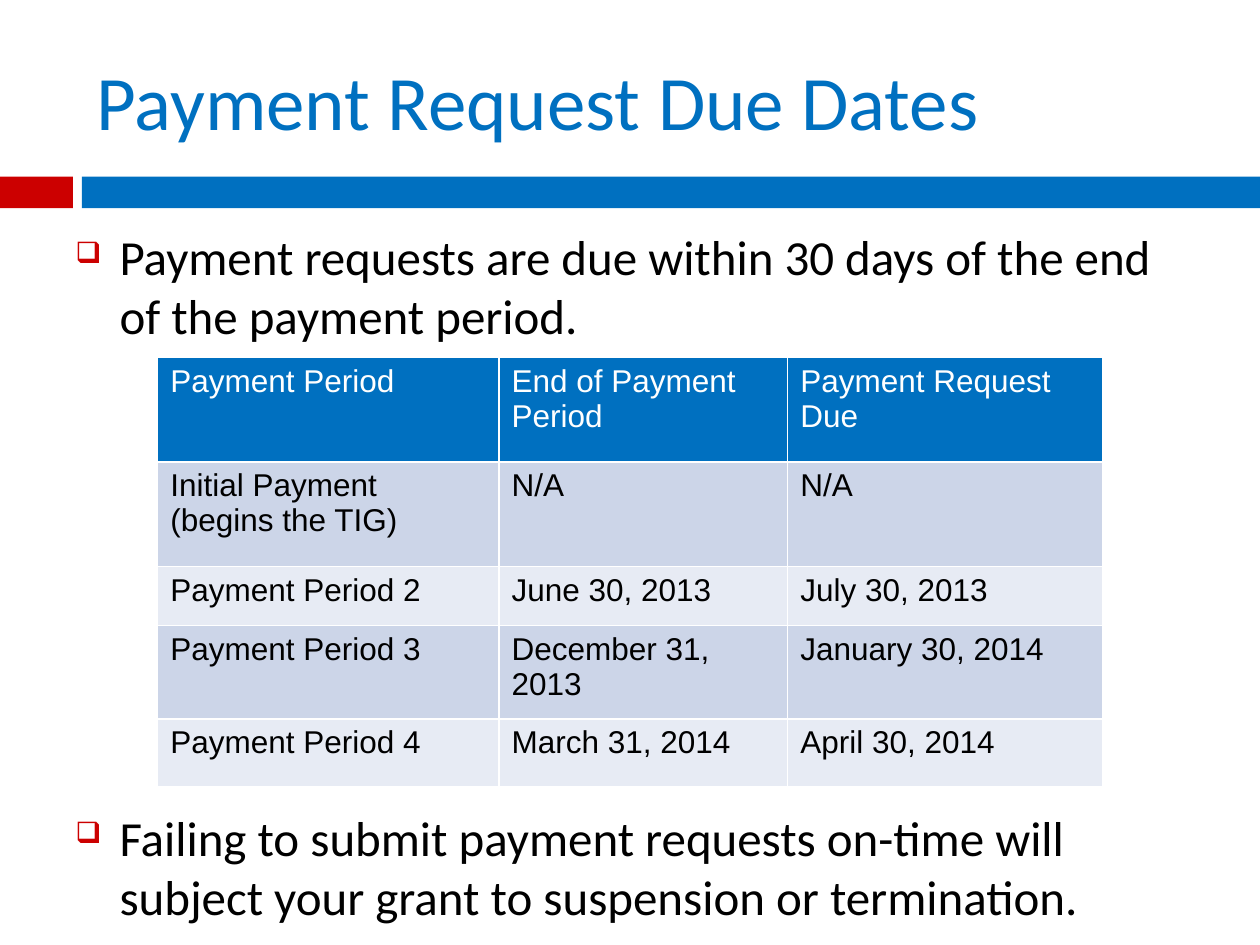
from lxml.etree import SubElement
from pptx import Presentation
from pptx.dml.color import RGBColor
from pptx.enum.shapes import MSO_SHAPE as Shape
from pptx.enum.text import MSO_ANCHOR as Anchor
from pptx.oxml.ns import qn
from pptx.util import Cm, Pt

COLORS = {
    "blue": "0070C0",
    "red": "CC0000",
    "white": "FFFFFF",
    "black": "000000",
    "dark_band": "CCD5E8",
    "light_band": "E7EBF4",
}
COLUMN_WIDTHS = [6.88, 5.82, 6.35]
ROW_HEIGHTS = [2.11, 2.11, 1.19, 1.88, 1.37]
DUE_DATES = [
    ["Payment Period", "End of Payment Period", "Payment Request Due"],
    ["Initial Payment (begins the TIG)", "N/A", "N/A"],
    ["Payment Period 2", "June 30, 2013", "July 30, 2013"],
    ["Payment Period 3", "December 31, 2013", "January 30, 2014"],
    ["Payment Period 4", "March 31, 2014", "April 30, 2014"],
]


def rgb(name):
    return RGBColor.from_string(COLORS[name])


def style_font(font, name, size, color):
    font.name = name
    font.size = Pt(size)
    font.color.rgb = rgb(color)


def add_bar(page, left, width, color):
    bar = page.shapes.add_shape(
        Shape.RECTANGLE, Cm(left), Cm(3.56), Cm(width), Cm(0.64))
    bar.shadow.inherit = False
    bar.fill.solid()
    bar.fill.fore_color.rgb = rgb(color)
    bar.line.fill.background()


def add_text(page, left, top, width, height, text, size, color):
    box = page.shapes.add_textbox(Cm(left), Cm(top), Cm(width), Cm(height))
    frame = box.text_frame
    frame.word_wrap = True
    frame.text = text
    style_font(frame.paragraphs[0].runs[0].font, "Calibri", size, color)
    return frame


def add_bullet(page, top, text):
    """Add a paragraph with a hanging red box as its bullet."""
    frame = add_text(page, 1.27, top, 22.86, 2.7, text, 28, "black")
    properties = frame.paragraphs[0]._p.get_or_add_pPr()
    properties.set("marL", str(Cm(0.89)))
    properties.set("indent", str(-Cm(0.89)))
    bullet_color = SubElement(properties, qn("a:buClr"))
    SubElement(bullet_color, qn("a:srgbClr"), val=COLORS["red"])
    SubElement(properties, qn("a:buSzPct"), val="60000")
    SubElement(properties, qn("a:buChar"), char="❑")


def add_borders(cell):
    properties = cell._tc.get_or_add_tcPr()
    for side in ("lnL", "lnR", "lnT", "lnB"):
        line = SubElement(properties, qn(f"a:{side}"), w=str(Pt(1)))
        fill = SubElement(line, qn("a:solidFill"))
        SubElement(fill, qn("a:srgbClr"), val=COLORS["white"])


def style_cell(cell, text, fill, color):
    add_borders(cell)
    cell.fill.solid()
    cell.fill.fore_color.rgb = rgb(fill)
    cell.text = text
    style_font(cell.text_frame.paragraphs[0].runs[0].font, "Arial", 18, color)


def add_due_dates(page):
    table = page.shapes.add_table(
        len(ROW_HEIGHTS), len(COLUMN_WIDTHS), Cm(3.18), Cm(7.2),
        Cm(sum(COLUMN_WIDTHS)), Cm(sum(ROW_HEIGHTS))).table
    table.first_row = False
    table.horz_banding = False
    for column, width in zip(table.columns, COLUMN_WIDTHS):
        column.width = Cm(width)
    for index, (row, height) in enumerate(zip(table.rows, ROW_HEIGHTS)):
        row.height = Cm(height)
        if index == 0:
            fill, color = "blue", "white"
        else:
            fill, color = "dark_band" if index % 2 else "light_band", "black"
        for cell, text in zip(row.cells, DUE_DATES[index]):
            style_cell(cell, text, fill, color)


def main():
    deck = Presentation()
    deck.slide_width, deck.slide_height = Cm(25.4), Cm(19.05)
    page = deck.slides.add_slide(deck.slide_layouts[6])
    add_bar(page, 0, 1.47, "red")
    add_bar(page, 1.65, 23.75, "blue")
    title = add_text(page, 1.7, 0.64, 22.66, 2.74,
                     "Payment Request Due Dates", 44, "blue")
    title.vertical_anchor = Anchor.MIDDLE
    add_bullet(page, 4.45, "Payment requests are due within 30 days "
                           "of the end of the payment period.")
    add_due_dates(page)
    add_bullet(page, 16.15, "Failing to submit payment requests on-time will "
                            "subject your grant to suspension or termination.")
    deck.save("out.pptx")


if __name__ == "__main__":
    main()
